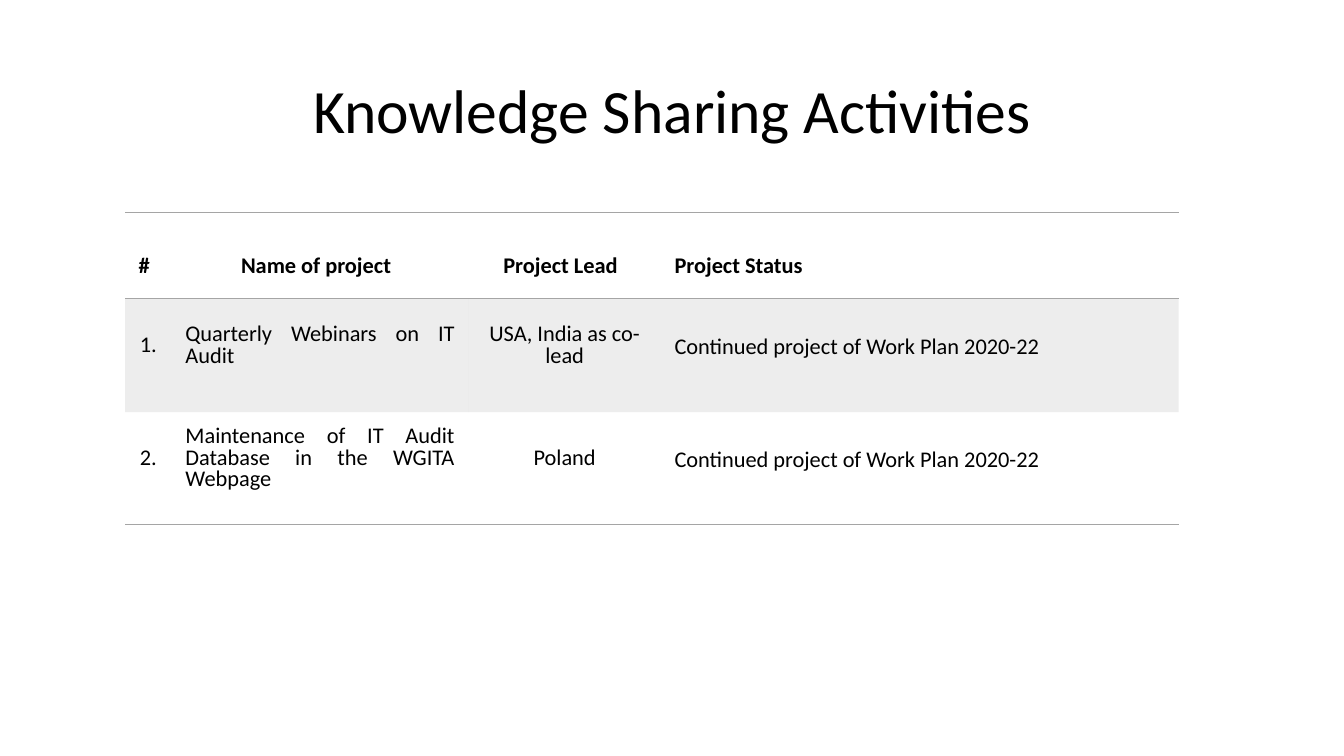
from lxml import etree
from pptx import Presentation
from pptx.dml.color import RGBColor
from pptx.enum.text import MSO_ANCHOR, PP_ALIGN
from pptx.oxml.ns import qn
from pptx.util import Inches, Pt

CENTER, JUSTIFY, LEFT = PP_ALIGN.CENTER, PP_ALIGN.JUSTIFY, PP_ALIGN.LEFT
MIDDLE, BOTTOM = MSO_ANCHOR.MIDDLE, MSO_ANCHOR.BOTTOM
BLACK, GRAY = "000000", "A5A5A5"


def color(value):
    return RGBColor.from_string(value)


def style(p, size, bold, align):
    p.alignment = align
    for r in p.runs:
        r.font.name = "Calibri"
        r.font.size = Pt(size)
        r.font.bold = bold
        r.font.color.rgb = color(BLACK)


prs = Presentation()
prs.slide_width, prs.slide_height = Inches(13.33), Inches(7.5)
s = prs.slides.add_slide(prs.slide_layouts[6])

title = s.shapes.add_textbox(Inches(0.92), Inches(0.4), Inches(11.5), Inches(1.45))
tf = title.text_frame
tf.word_wrap = True
tf.vertical_anchor = MIDDLE
tf.text = "Knowledge Sharing Activities"
tf.paragraphs[0].line_spacing = 0.9
style(tf.paragraphs[0], 44, False, CENTER)

rows = [
    ["#", "Name of project", "Project Lead", "Project Status"],
    ["1.", "Quarterly Webinars on IT Audit", "USA, India as co-lead",
     "Continued project of Work Plan 2020-22"],
    ["2.", "Maintenance of IT Audit Database in the WGITA Webpage", "Poland",
     "Continued project of Work Plan 2020-22"],
]
col_widths = [0.51, 2.9, 1.95, 5.09]
row_heights = [0.85, 1.13, 1.11]
header_aligns = [CENTER, CENTER, CENTER, LEFT]
body_aligns = [CENTER, JUSTIFY, CENTER, JUSTIFY]
ruled_edges = [("lnT", "lnB"), ("lnT",), ("lnB",)]

table = s.shapes.add_table(
    len(rows), len(col_widths), Inches(1.24), Inches(2.11),
    Inches(sum(col_widths)), Inches(sum(row_heights))).table
table.horz_banding = False
for col, width in zip(table.columns, col_widths):
    col.width = Inches(width)

for i, texts in enumerate(rows):
    table.rows[i].height = Inches(row_heights[i])
    header = i == 0
    aligns = header_aligns if header else body_aligns
    for j, text in enumerate(texts):
        cell = table.cell(i, j)
        cell.margin_left, cell.margin_top = Inches(0.09), Inches(0.03)
        cell.margin_right = Inches(0.22 if header else 0.14)
        cell.margin_bottom = Inches(0.19)
        cell.vertical_anchor = BOTTOM if header else MIDDLE
        cell.text = text
        p = cell.text_frame.paragraphs[0]
        style(p, 16, header, aligns[j])
        if j < 3:
            p.line_spacing = Pt(15.6)

        tcPr = cell._tc.get_or_add_tcPr()
        if i == 1:
            cell.fill.solid()
            cell.fill.fore_color.rgb = color(GRAY)
            rgb = tcPr.find(".//" + qn("a:srgbClr"))
            etree.SubElement(rgb, qn("a:alpha"), val="20000")
        else:
            cell.fill.background()
        for k, edge in enumerate(("lnL", "lnR", "lnT", "lnB")):
            ln = etree.Element(qn("a:" + edge), w=str(Pt(1)))
            if edge in ruled_edges[i]:
                fill = etree.SubElement(ln, qn("a:solidFill"))
                etree.SubElement(fill, qn("a:srgbClr"), val=GRAY)
            else:
                etree.SubElement(ln, qn("a:noFill"))
            tcPr.insert(k, ln)

prs.save("out.pptx")
